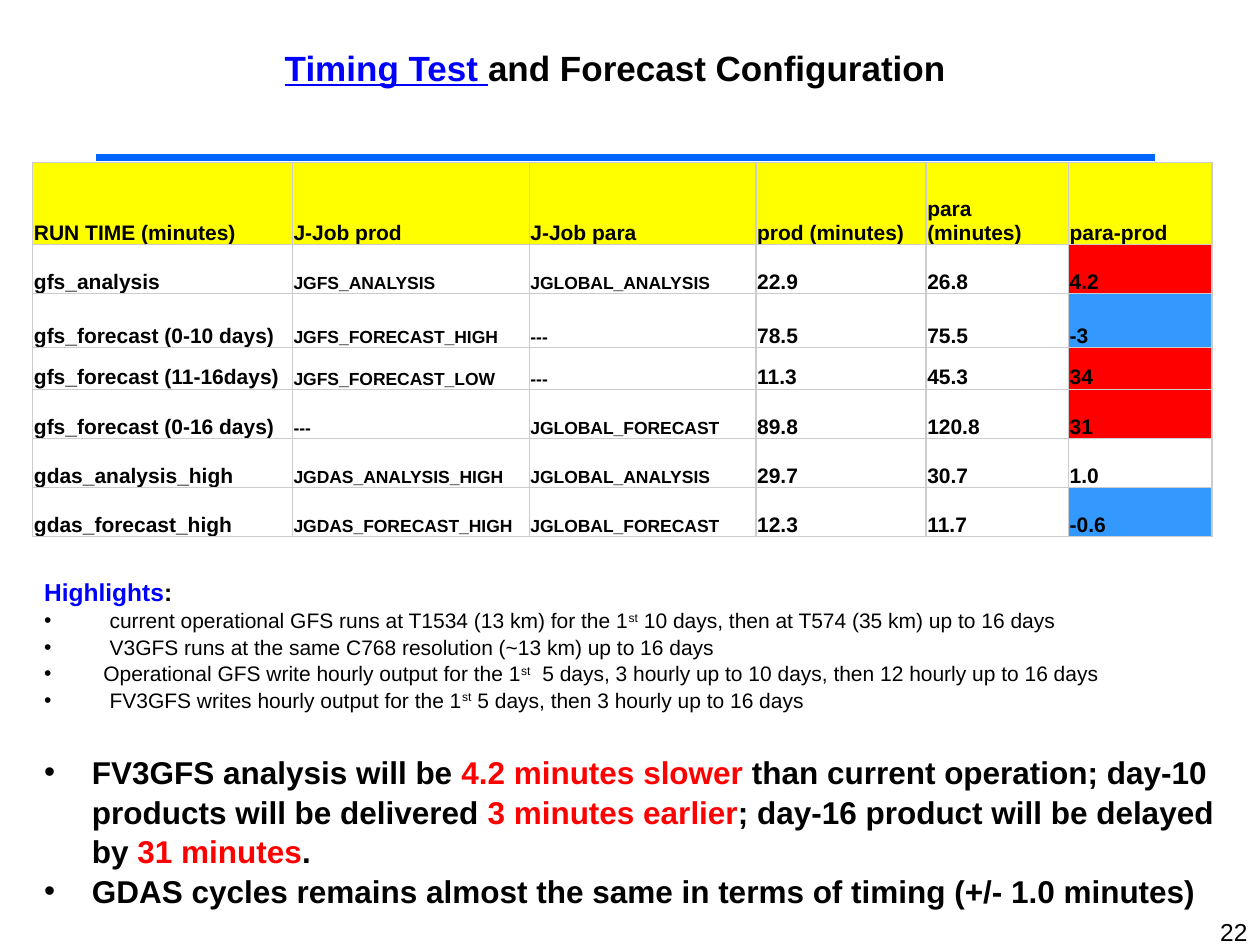
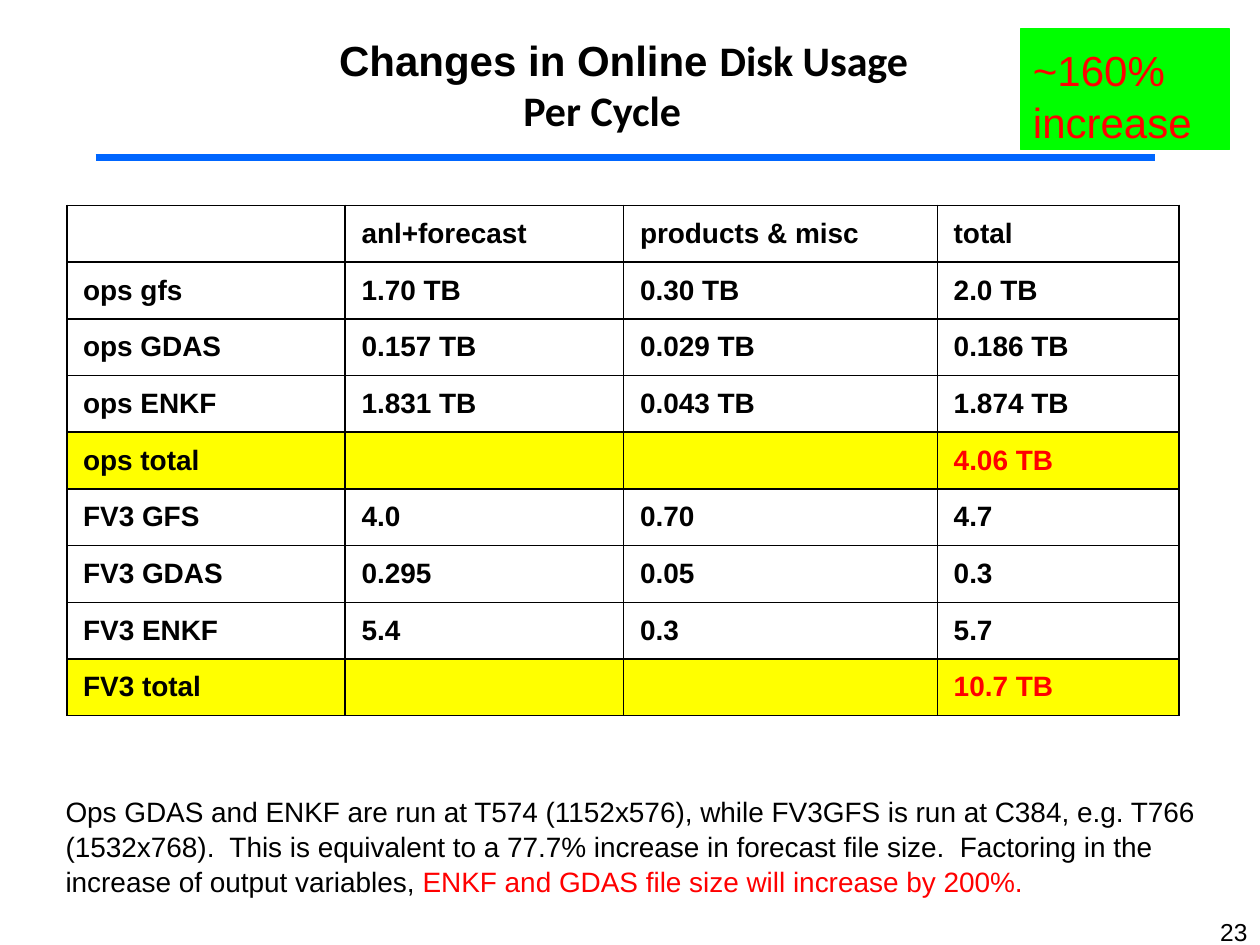
from lxml.etree import SubElement
from pptx import Presentation
from pptx.dml.color import RGBColor
from pptx.enum.shapes import MSO_CONNECTOR, MSO_SHAPE
from pptx.enum.text import MSO_ANCHOR, MSO_AUTO_SIZE, PP_ALIGN
from pptx.oxml.ns import qn
from pptx.util import Inches, Pt

BLACK = RGBColor(0x00, 0x00, 0x00)
RED = RGBColor(0xFF, 0x00, 0x00)
YELLOW = RGBColor(0xFF, 0xFF, 0x00)
GREEN = RGBColor(0x00, 0xFF, 0x00)
LINK_BLUE = RGBColor(0x00, 0x00, 0xFF)
RULE_BLUE = RGBColor(0x00, 0x66, 0xFF)
FASTER_BLUE = RGBColor(0x33, 0x99, 0xFF)
GRID_GRAY = RGBColor(0xCC, 0xCC, 0xCC)

BODY_SPACING = 1.05
HIGHLIGHT = dict(bold=True, color=RED)
BOLD = dict(bold=True)
SUPERSCRIPT = dict(superscript=True)

TIMING_TITLE = [dict(runs=[
    ("Timing Test ", dict(color=LINK_BLUE, underline=True, bold=True)),
    ("and Forecast Configuration", BOLD)])]
TIMING_COLUMNS = [2.06, 1.88, 1.8, 1.35, 1.13, 1.14]
TIMING_ROW_HEIGHTS = [0.65, 0.39, 0.43, 0.33, 0.39, 0.39, 0.39]
TIMING_ROWS = [
    ["RUN TIME (minutes)", "J-Job prod", "J-Job para", "prod (minutes)", "para (minutes)", "para-prod"],
    ["gfs_analysis", "JGFS_ANALYSIS", "JGLOBAL_ANALYSIS", "22.9", "26.8", "4.2"],
    ["gfs_forecast (0-10 days)", "JGFS_FORECAST_HIGH", "---", "78.5", "75.5", "-3"],
    ["gfs_forecast (11-16days)", "JGFS_FORECAST_LOW", "---", "11.3", "45.3", "34"],
    ["gfs_forecast (0-16 days)", "---", "JGLOBAL_FORECAST", "89.8", "120.8", "31"],
    ["gdas_analysis_high", "JGDAS_ANALYSIS_HIGH", "JGLOBAL_ANALYSIS", "29.7", "30.7", "1.0"],
    ["gdas_forecast_high", "JGDAS_FORECAST_HIGH", "JGLOBAL_FORECAST", "12.3", "11.7", "-0.6"],
]
HIGHLIGHTS = [
    dict(size=14, runs=[("Highlights", dict(bold=True, color=LINK_BLUE)), (":", BOLD)]),
    dict(size=12, bullet=True, indent=0.52, runs=[
        ("current operational GFS runs at T1534 (13 km) for the 1", {}), ("st", SUPERSCRIPT),
        (" 10 days, then at T574 (35 km) up to 16 days", {})]),
    dict(size=12, bullet=True, indent=0.52, runs=[
        ("V3GFS runs at the same C768 resolution (~13 km) up to 16 days", {})]),
    dict(size=12, bullet=True, indent=0.47, runs=[
        ("Operational GFS write hourly output for the 1", {}), ("st", SUPERSCRIPT),
        ("  5 days, 3 hourly up to 10 days, then 12 hourly up to 16 days", {})]),
    dict(size=12, bullet=True, indent=0.52, runs=[
        ("FV3GFS writes hourly output for the 1", {}), ("st", SUPERSCRIPT),
        (" 5 days, then 3 hourly up to 16 days", {})]),
    dict(size=18, bullet=True, indent=0.38, space_before=22, runs=[
        ("FV3GFS analysis will be ", BOLD), ("4.2 minutes slower ", HIGHLIGHT),
        ("than current operation; day-10 products will be delivered ", BOLD),
        ("3 minutes earlier", HIGHLIGHT),
        ("; day-16 product will be delayed by ", BOLD), ("31 minutes", HIGHLIGHT), (".", BOLD)]),
    dict(size=18, bullet=True, indent=0.38, runs=[
        ("GDAS cycles remains almost the same in terms of timing (+/- 1.0 minutes)", BOLD)]),
]

DISK_TITLE = [
    dict(size=24, left=0.4, align=PP_ALIGN.CENTER, runs=[
        ("Changes in Online ", BOLD), ("Disk Usage", dict(bold=True, font="Calibri"))]),
    dict(size=24, left=0.06, align=PP_ALIGN.CENTER, runs=[
        ("Per Cycle", dict(bold=True, font="Calibri"))]),
]
DISK_COLUMNS = [2.21, 2.21, 2.49, 1.92]
DISK_ROWS = [
    ["", "anl+forecast", "products & misc", "total"],
    ["ops gfs", "1.70 TB", "0.30 TB", "2.0 TB"],
    ["ops GDAS", "0.157 TB", "0.029 TB", "0.186 TB"],
    ["ops ENKF", "1.831 TB", "0.043 TB", "1.874 TB"],
    ["ops total", "", "", "4.06 TB"],
    ["FV3 GFS", "4.0", "0.70", "4.7"],
    ["FV3 GDAS", "0.295", "0.05", "0.3"],
    ["FV3 ENKF", "5.4", "0.3", "5.7"],
    ["FV3 total", "", "", "10.7 TB"],
]
DISK_NOTE = [dict(size=16, runs=[
    ("Ops GDAS and ENKF are run at T574 (1152x576), while FV3GFS is run at C384, e.g. T766 "
     "(1532x768).  This is equivalent to a 77.7% increase in forecast file size.  Factoring in "
     "the increase of output variables, ", {}),
    ("ENKF and GDAS file size will increase by 200%.", dict(color=RED))])]
INCREASE = [dict(size=24, runs=[("~160% increase", dict(color=RED))])]


def add_run(paragraph, text, size=12, color=BLACK, bold=False, underline=False,
            font="Arial", superscript=False):
    run = paragraph.add_run()
    run.text = text
    run.font.name = font
    run.font.size = Pt(size)
    run.font.bold = bold
    run.font.underline = underline
    run.font.color.rgb = color
    if superscript:
        run._r.get_or_add_rPr().set("baseline", "30000")


def fill_text(shape, paragraphs, anchor=MSO_ANCHOR.TOP, margins=(0.1, 0.05), spacing=1.0):
    frame = shape.text_frame
    frame.word_wrap = True
    frame.auto_size = MSO_AUTO_SIZE.NONE
    frame.vertical_anchor = anchor
    frame.margin_left = frame.margin_right = Inches(margins[0])
    frame.margin_top = frame.margin_bottom = Inches(margins[1])
    for index, item in enumerate(paragraphs):
        paragraph = frame.add_paragraph() if index else frame.paragraphs[0]
        indent = item.get("indent", 0)
        properties = paragraph._p.get_or_add_pPr()
        properties.set("marL", str(Inches(item.get("left", indent))))
        properties.set("indent", str(-Inches(indent)))
        if item.get("bullet"):
            SubElement(properties, qn("a:buFont")).set("typeface", "Arial")
            SubElement(properties, qn("a:buChar")).set("char", "•")
        else:
            SubElement(properties, qn("a:buNone"))
        paragraph.alignment = item.get("align", PP_ALIGN.LEFT)
        paragraph.line_spacing = spacing
        paragraph.space_before = Pt(item.get("space_before", 0))
        paragraph.space_after = Pt(0)
        for text, style in item["runs"]:
            add_run(paragraph, text, size=item["size"], **style)


def place(shape, left, top, width, height):
    shape.left, shape.top = Inches(left), Inches(top)
    shape.width, shape.height = Inches(width), Inches(height)
    return shape


def add_base_slide(presentation, number):
    slide = presentation.slides.add_slide(presentation.slide_layouts[1])
    rule = slide.shapes.add_connector(
        MSO_CONNECTOR.STRAIGHT, Inches(0.76), Inches(1.25), Inches(9.17), Inches(1.25))
    rule.line.color.rgb = RULE_BLUE
    rule.line.width = Pt(4.5)
    SubElement(rule._element.spPr, qn("a:effectLst"))
    page = slide.shapes.add_textbox(Inches(7.67), Inches(7.28), Inches(2.33), Inches(0.22))
    fill_text(page, [dict(size=14, align=PP_ALIGN.RIGHT, runs=[(str(number), {})])],
              margins=(0.1, 0))
    return slide


def set_borders(cell, color, width):
    properties = cell._tc.get_or_add_tcPr()
    for side in ("a:lnL", "a:lnR", "a:lnT", "a:lnB"):
        line = SubElement(properties, qn(side), w=str(Pt(width)))
        solid = SubElement(line, qn("a:solidFill"))
        SubElement(solid, qn("a:srgbClr")).set("val", str(color))


def add_grid(slide, left, top, columns, heights, rows, style, border, anchor, margins):
    table = slide.shapes.add_table(
        len(rows), len(columns), Inches(left), Inches(top),
        Inches(sum(columns)), Inches(sum(heights))).table
    table.first_row = table.horz_banding = False
    for column, width in zip(table.columns, columns):
        column.width = Inches(width)
    for row_index, values in enumerate(rows):
        table.rows[row_index].height = Inches(heights[row_index])
        for column_index, text in enumerate(values):
            cell = table.cell(row_index, column_index)
            cell.vertical_anchor = anchor
            cell.margin_left = cell.margin_right = Inches(margins[0])
            cell.margin_top = cell.margin_bottom = Inches(margins[1] if text else 0)
            fill, size, color = style(row_index, column_index, text)
            set_borders(cell, *border)
            if fill is None:
                cell.fill.background()
            else:
                cell.fill.solid()
                cell.fill.fore_color.rgb = fill
            if text:
                add_run(cell.text_frame.paragraphs[0], text, size=size, color=color, bold=True)


def timing_style(row, column, text):
    if row == 0:
        return YELLOW, 12, BLACK
    fill = None
    if column == 5:
        difference = float(text)
        fill = FASTER_BLUE if difference < 0 else RED if difference > 1 else None
    return fill, 10 if column in (1, 2) else 12, BLACK


def disk_style(row, column, text):
    is_total = DISK_ROWS[row][0].endswith("total")
    return YELLOW if is_total else None, 16, RED if is_total and column == 3 else BLACK


def build_timing_slide(presentation):
    slide = add_base_slide(presentation, 22)
    title = place(slide.shapes.title, 2.16, 0.35, 5.48, 0.4)
    fill_text(title, [dict(size=20, **item) for item in TIMING_TITLE], MSO_ANCHOR.BOTTOM)
    add_grid(slide, 0.26, 1.29, TIMING_COLUMNS, TIMING_ROW_HEIGHTS, TIMING_ROWS,
             timing_style, (GRID_GRAY, 0.75), MSO_ANCHOR.BOTTOM, (0.01, 0))
    body = place(slide.placeholders[1], 0.25, 4.52, 9.55, 2.7)
    fill_text(body, HIGHLIGHTS, spacing=BODY_SPACING)


def build_disk_slide(presentation):
    slide = add_base_slide(presentation, 23)
    title = place(slide.shapes.title, 1.39, 0.27, 6.72, 0.8)
    fill_text(title, DISK_TITLE, MSO_ANCHOR.MIDDLE)
    add_grid(slide, 0.53, 1.63, DISK_COLUMNS, [0.45] * len(DISK_ROWS), DISK_ROWS,
             disk_style, (BLACK, 1), MSO_ANCHOR.MIDDLE, (0.13, 0.09))
    body = place(slide.placeholders[1], 0.42, 6.19, 9.19, 1.04)
    fill_text(body, DISK_NOTE, margins=(0.1, 0.1), spacing=BODY_SPACING)
    callout = slide.shapes.add_shape(
        MSO_SHAPE.RECTANGLE, Inches(8.1), Inches(0.23), Inches(1.66), Inches(0.96))
    callout.shadow.inherit = False
    callout.fill.solid()
    callout.fill.fore_color.rgb = GREEN
    callout.line.color.rgb = GREEN
    callout.line.width = Pt(0.75)
    fill_text(callout, INCREASE, margins=(0.1, 0.1), spacing=BODY_SPACING)


def main():
    presentation = Presentation()
    presentation.slide_width = Inches(10)
    presentation.slide_height = Inches(7.5)
    build_timing_slide(presentation)
    build_disk_slide(presentation)
    presentation.save("out.pptx")


if __name__ == "__main__":
    main()
